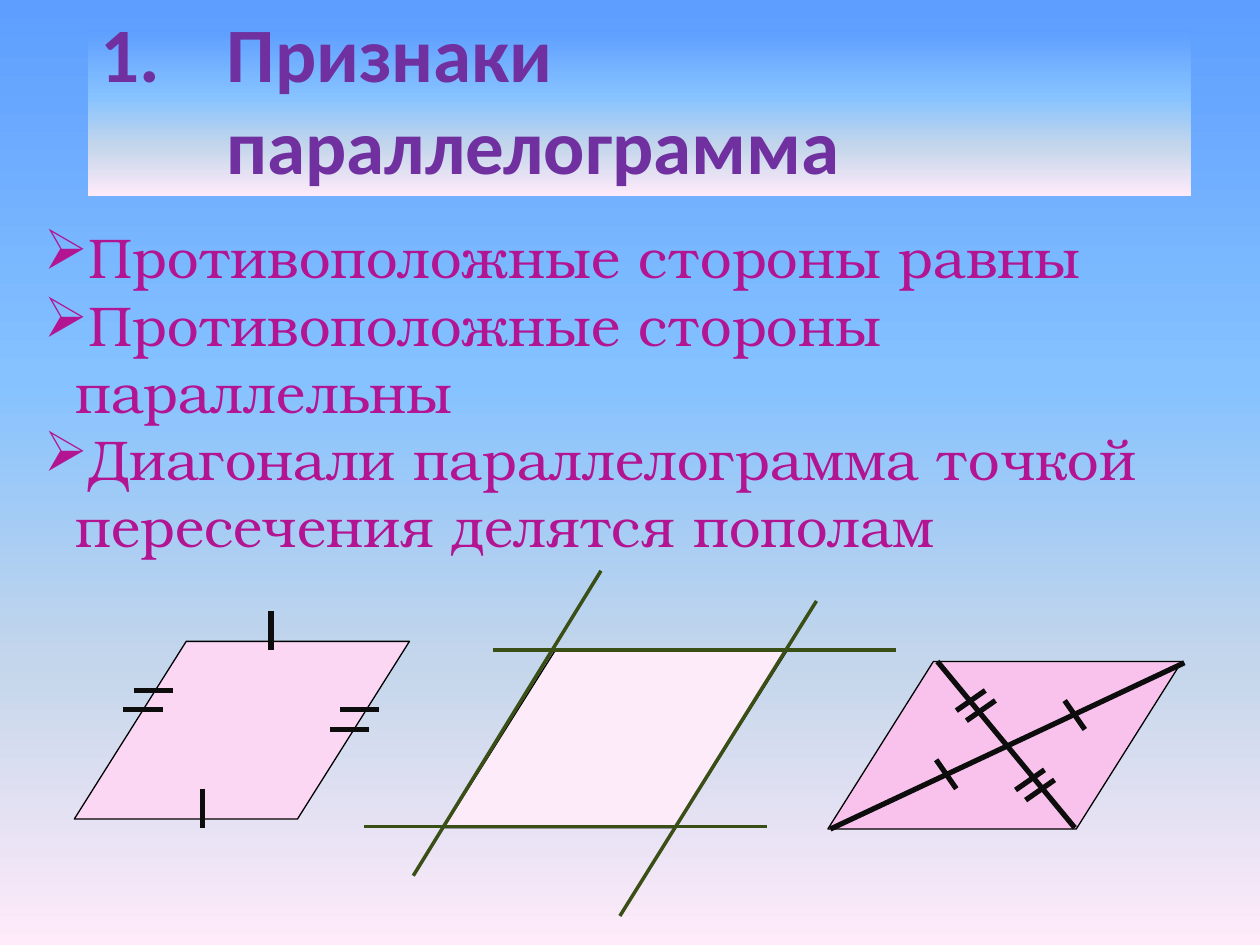
from lxml.etree import SubElement
from pptx import Presentation
from pptx.dml.color import RGBColor
from pptx.enum.shapes import MSO_CONNECTOR as Connector, MSO_SHAPE as Shape
from pptx.enum.text import MSO_ANCHOR as Anchor, MSO_AUTO_SIZE as AutoSize
from pptx.oxml.ns import qn
from pptx.util import Inches, Pt

SKY = [(0, "5E9EFF"), (40, "85C2FF"), (70, "C4D6EB"), (100, "FFEBFA")]
MARK = ("0D0D0D", 3)
SIDE = ("3A4F16", 2)
TICK = 0.31

TITLE = "Признаки параллелограмма"
TITLE_FONT = {"name": "Calibri", "size": Pt(44), "bold": True}
PROPERTIES = [
    "Противоположные стороны равны",
    "Противоположные стороны параллельны",
    "Диагонали параллелограмма точкой пересечения делятся пополам",
]
PROPERTY_FONT = {"name": "TeX Gyre Bonum", "size": Pt(32)}


def rgb(color):
    return RGBColor.from_string(color)


def fill_sky(fill, element):
    """Vertical gradient shared by the background and the title."""
    fill.gradient()
    fill.gradient_angle = 270
    stops = next(element.iter(qn("a:gsLst")))
    for old in list(stops):
        stops.remove(old)
    for percent, color in SKY:
        stop = SubElement(stops, qn("a:gs"), pos=str(percent * 1000))
        SubElement(stop, qn("a:srgbClr"), val=color)


def add_text_box(slide, left, top, width, height):
    box = slide.shapes.add_textbox(*map(Inches, (left, top, width, height)))
    box.text_frame.word_wrap = True
    return box


def write_bullet(paragraph, text, margin, indent, bullet, font, color):
    props = paragraph._p.get_or_add_pPr()
    props.set("marL", str(Inches(margin)))
    props.set("indent", str(Inches(indent)))
    tag, attributes = bullet
    SubElement(props, qn(tag), **attributes)
    run = paragraph.add_run()
    run.text = text
    for name, value in font.items():
        setattr(run.font, name, value)
    run.font.color.rgb = rgb(color)


def add_parallelogram(shapes, left, top, width, height, color):
    figure = shapes.add_shape(Shape.PARALLELOGRAM,
                              *map(Inches, (left, top, width, height)))
    figure.adjustments[0] = 0.63
    figure.shadow.inherit = False
    figure.fill.solid()
    figure.fill.fore_color.rgb = rgb(color)
    figure.line.color.rgb = rgb("000000")
    figure.line.width = Pt(0.75)


def add_line(shapes, start, end, style):
    color, width = style
    line = shapes.add_connector(Connector.STRAIGHT,
                                *map(Inches, (*start, *end)))
    line.line.color.rgb = rgb(color)
    line.line.width = Pt(width)
    SubElement(line._element.spPr, qn("a:effectLst"))


def add_ticks(shapes, starts, dx, dy):
    for x, y in starts:
        add_line(shapes, (x, y), (x + dx, y + dy), MARK)


def add_title(slide):
    box = add_text_box(slide, 0.7, 0.23, 8.75, 1.33)
    fill_sky(box.fill, box._element)
    frame = box.text_frame
    frame.vertical_anchor = Anchor.BOTTOM
    frame.margin_right = Inches(0.2)
    write_bullet(frame.paragraphs[0], TITLE, 1, -1,
                 ("a:buAutoNum", {"type": "arabicPeriod"}),
                 TITLE_FONT, "7030A0")


def add_properties(slide):
    frame = add_text_box(slide, 0, 1.72, 10, 2.26).text_frame
    frame.auto_size = AutoSize.SHAPE_TO_FIT_TEXT
    for index, text in enumerate(PROPERTIES):
        paragraph = frame.add_paragraph() if index else frame.paragraphs[0]
        paragraph.level = 1
        write_bullet(paragraph, text, 0.5, -0.25,
                     ("a:buChar", {"char": "➢"}), PROPERTY_FONT, "B31492")


def add_equal_sides(slide):
    shapes = slide.shapes.add_group_shape().shapes
    add_parallelogram(shapes, 0.59, 5.09, 2.66, 1.41, "FBD7F3")
    add_ticks(shapes, [(2.15, 4.85), (1.61, 6.26)], 0, TICK)
    add_ticks(shapes, [(0.98, 5.63), (1.06, 5.48), (2.7, 5.63), (2.62, 5.79)],
              TICK, 0)


def add_parallel_sides(slide):
    for start, end in [((3.28, 6.95), (4.77, 4.53)),
                       ((4.92, 7.27), (6.48, 4.77)),
                       ((2.89, 6.56), (6.09, 6.56)),
                       ((3.91, 5.16), (7.11, 5.16))]:
        add_line(slide.shapes, start, end, SIDE)


def add_bisected_diagonals(slide):
    shapes = slide.shapes.add_group_shape().shapes
    add_parallelogram(shapes, 6.57, 5.25, 2.81, 1.33, "F8C2ED")
    add_line(shapes, (9.4, 5.26), (6.59, 6.58), MARK)
    add_line(shapes, (7.44, 5.25), (8.53, 6.57), MARK)
    # Single ticks on the long diagonal, double ticks on the short one
    add_ticks(shapes, [(8.45, 5.56), (7.43, 6.03)], 0.16, 0.23)
    double = [(x + gap, y + gap) for x, y in [(7.82, 5.48), (8.29, 6.11)]
              for gap in (0, 0.08)]
    add_ticks(shapes, double, -0.23, 0.16)


def main():
    deck = Presentation()
    deck.slide_width, deck.slide_height = Inches(10), Inches(7.5)
    slide = deck.slides.add_slide(deck.slide_layouts[6])
    fill_sky(slide.background.fill, slide.element)

    # Heading
    add_title(slide)
    # Figures and the list of properties
    add_parallelogram(slide.shapes, 3.52, 5.16, 2.73, 1.41, "FDEBF9")
    add_equal_sides(slide)
    add_bisected_diagonals(slide)
    add_properties(slide)
    add_parallel_sides(slide)

    deck.save("out.pptx")


if __name__ == "__main__":
    main()
